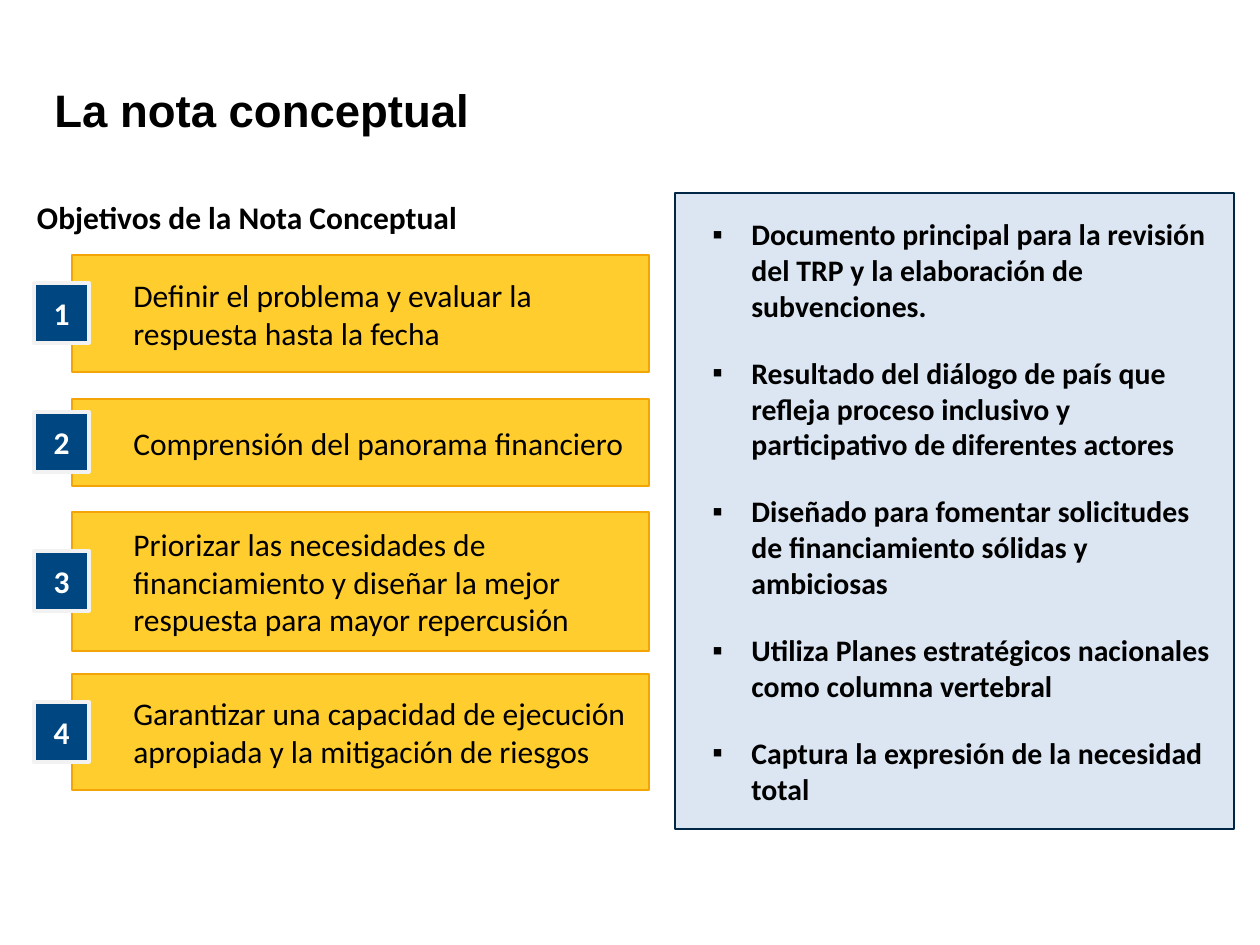
from pptx import Presentation
from pptx.dml.color import RGBColor
from pptx.enum.shapes import MSO_SHAPE as SHAPE
from pptx.enum.text import MSO_ANCHOR as ANCHOR, PP_ALIGN as ALIGN
from pptx.util import Emu, Pt
from lxml.etree import SubElement
from pptx.oxml.ns import qn

COLORS = {
    "black": "000000", "white": "FFFFFF",
    "yellow": "FFCD2D", "amber": "F3A407",
    "blue": "004782", "pale_gray": "F2F2F2",
    "pale_blue": "DCE6F2", "navy": "002846",
}


def px(n):
    return Emu(round(n * 914400 / 126))


def write(shape, lines, size, color="black", bold=False, font="Calibri"):
    frame = shape.text_frame
    frame.word_wrap = True
    frame.text = "\n".join(lines)
    for paragraph in frame.paragraphs:
        paragraph.alignment = ALIGN.LEFT
        for run in paragraph.runs:
            run.font.name = font
            run.font.size = Pt(size)
            run.font.bold = bold
            run.font.color.rgb = RGBColor.from_string(COLORS[color])
    return frame


deck = Presentation()
deck.slide_width, deck.slide_height = px(1260), px(945)
slide = deck.slides.add_slide(deck.slide_layouts[6])
shapes = slide.shapes

title = shapes.add_textbox(px(42), px(76), px(1174), px(66))
write(title, ["La nota conceptual"], 26, bold=True, font="Arial")

heading = shapes.add_textbox(px(24), px(185), px(514), px(63))
heading_frame = write(heading, ["Objetivos de la Nota Conceptual"], 18, bold=True)
heading_frame.margin_left = heading_frame.margin_right = px(13)
heading_frame.margin_top = heading_frame.margin_bottom = px(13)

objectives = [
    (255, 117, "Definir el problema y evaluar la respuesta hasta la fecha"),
    (399, 87, "Comprensión del panorama financiero"),
    (512, 139, "Priorizar las necesidades de financiamiento y diseñar la mejor "
               "respuesta para mayor repercusión"),
    (674, 116, "Garantizar una capacidad de ejecución apropiada y la mitigación "
               "de riesgos"),
]
badge_height = 60
filled = []
for number, (top, height, objective) in enumerate(objectives, 1):
    bar = shapes.add_shape(SHAPE.PENTAGON, px(72), px(top), px(577), px(height))
    bar.adjustments[0] = 0
    bar_frame = write(bar, [objective], 18)
    bar_frame.paragraphs[0]._p.get_or_add_pPr().set("marL", str(px(49)))
    filled.append((bar, "yellow", "amber", 0.75))

    badge_top = top + (height - badge_height) // 2
    badge = shapes.add_shape(SHAPE.RECTANGLE, px(34), px(badge_top), px(55), px(badge_height))
    badge_frame = write(badge, [str(number)], 18, "white", bold=True)
    badge_frame.paragraphs[0].alignment = ALIGN.CENTER
    filled.append((badge, "blue", "pale_gray", 2))

features = [
    "Documento principal para la revisión del TRP y la elaboración de subvenciones.",
    "Resultado del diálogo de país que refleja proceso inclusivo y participativo "
    "de diferentes actores",
    "Diseñado para fomentar solicitudes de financiamiento sólidas y ambiciosas",
    "Utiliza Planes estratégicos nacionales como columna vertebral",
    "Captura la expresión de la necesidad total",
]
panel = shapes.add_shape(SHAPE.RECTANGLE, px(675), px(193), px(559), px(636))
panel_frame = write(panel, features, 17, bold=True)
for feature in panel_frame.paragraphs:
    feature.space_before, feature.space_after = Pt(12), Pt(6)
    properties = feature._p.get_or_add_pPr()
    properties.set("marL", str(px(64)))
    properties.set("indent", str(-px(39)))
    SubElement(properties, qn("a:buFont"), typeface="Arial")
    SubElement(properties, qn("a:buChar"), char="▪")
filled.append((panel, "pale_blue", "navy", 0.75))

for shape, fill, line, width in filled:
    shape.shadow.inherit = False
    shape.fill.solid()
    shape.fill.fore_color.rgb = RGBColor.from_string(COLORS[fill])
    shape.line.color.rgb = RGBColor.from_string(COLORS[line])
    shape.line.width = Pt(width)
    shape.text_frame.vertical_anchor = ANCHOR.MIDDLE

deck.save("out.pptx")
